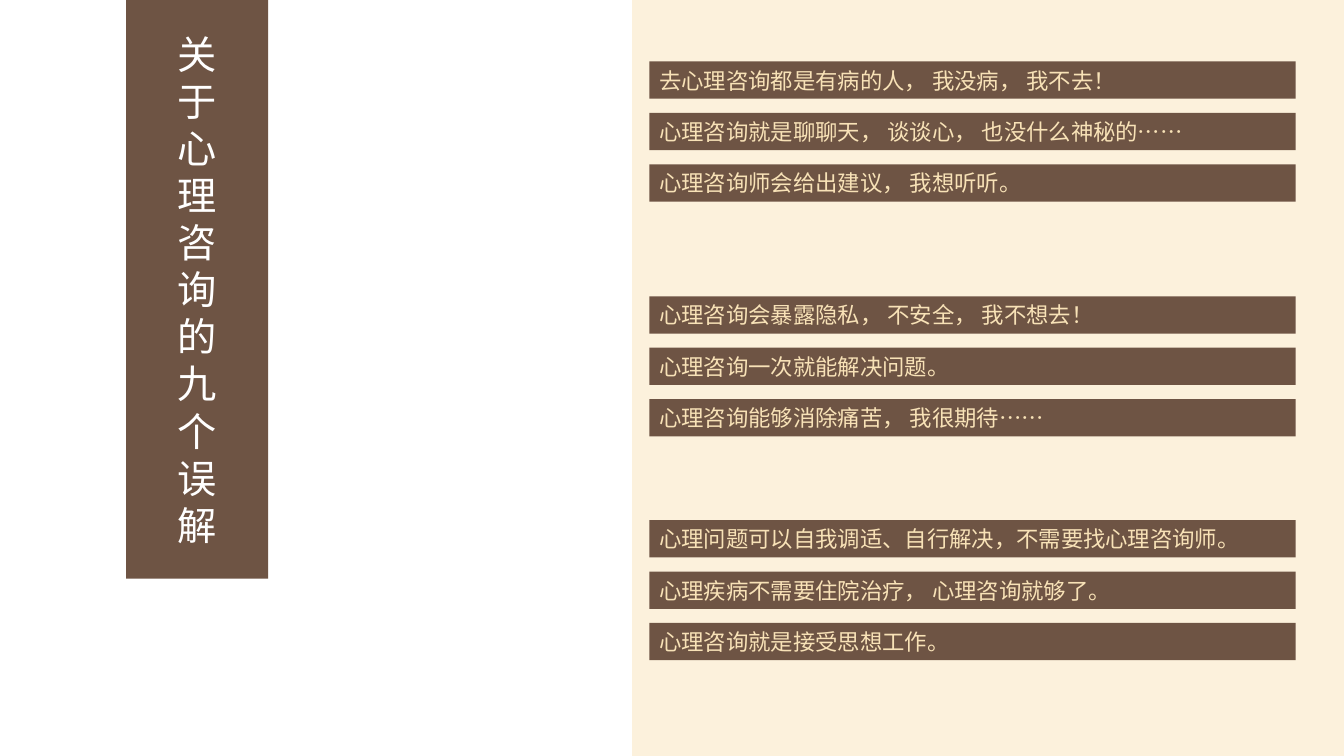
"""Build the slide on nine misconceptions about psychological counselling."""
from dataclasses import dataclass

from lxml.etree import SubElement
from pptx import Presentation
from pptx.dml.color import RGBColor
from pptx.enum.shapes import MSO_SHAPE
from pptx.enum.text import MSO_ANCHOR, MSO_AUTO_SIZE, PP_ALIGN
from pptx.oxml.ns import qn
from pptx.util import Inches, Pt


@dataclass(frozen=True)
class Theme:
    brown: RGBColor = RGBColor(0x6E, 0x54, 0x44)
    cream: RGBColor = RGBColor(0xFC, 0xF0, 0xD9)
    sand: RGBColor = RGBColor(0xF8, 0xE2, 0xB7)
    white: RGBColor = RGBColor(0xFF, 0xFF, 0xFF)
    title_font: str = "Arial"
    body_font: str = "Noto Sans CJK SC"
    title_size: Pt = Pt(28)
    title_leading: Pt = Pt(33.6)
    body_size: Pt = Pt(16)


theme = Theme()


def add_block(left, top, width, height, color):
    block = slide.shapes.add_shape(
        MSO_SHAPE.RECTANGLE, Inches(left), Inches(top), Inches(width), Inches(height))
    block.shadow.inherit = False
    block.fill.solid()
    block.fill.fore_color.rgb = color
    block.line.fill.background()
    return block


def style_text(frame, align, font_name, size, color):
    frame.word_wrap = True
    frame.auto_size = MSO_AUTO_SIZE.NONE
    frame.vertical_anchor = MSO_ANCHOR.MIDDLE
    frame.margin_top = frame.margin_bottom = 0
    for paragraph in frame.paragraphs:
        paragraph.alignment = align
        for run in paragraph.runs:
            run.font.size = size
            run.font.color.rgb = color
            run.font.name = font_name
            SubElement(run.font._element, qn("a:ea"), typeface=font_name)


prs = Presentation()
prs.slide_width = Inches(13.33)
prs.slide_height = Inches(7.5)
slide = prs.slides.add_slide(prs.slide_layouts[5])

panel = add_block(6.27, 0, 7.06, 7.5, theme.cream)
panel_color = panel.fill._xPr.find(qn("a:solidFill"))[0]
SubElement(panel_color, qn("a:alpha"), val="90000")

misconception_groups = [
    (0.61, ["去心理咨询都是有病的人， 我没病， 我不去！",
            "心理咨询就是聊聊天， 谈谈心， 也没什么神秘的……",
            "心理咨询师会给出建议， 我想听听。"]),
    (2.94, ["心理咨询会暴露隐私， 不安全， 我不想去！",
            "心理咨询一次就能解决问题。",
            "心理咨询能够消除痛苦， 我很期待……"]),
    (5.16, ["心理问题可以自我调适、自行解决，不需要找心理咨询师。",
            "心理疾病不需要住院治疗， 心理咨询就够了。",
            "心理咨询就是接受思想工作。"]),
]
bar_pitch = 0.51
for group_top, misconceptions in misconception_groups:
    for row, misconception in enumerate(misconceptions):
        bar = add_block(6.44, group_top + row * bar_pitch, 6.41, 0.37, theme.brown)
        bar.text_frame.text = misconception
        style_text(bar.text_frame, PP_ALIGN.LEFT, theme.body_font,
                   theme.body_size, theme.sand)

title = slide.shapes.title
title.left, title.top = Inches(1.25), Inches(0)
title.width, title.height = Inches(1.41), Inches(5.74)
title.fill.solid()
title.fill.fore_color.rgb = theme.brown
title.text_frame.text = "\n".join("关于心理咨询的九个误解")
style_text(title.text_frame, PP_ALIGN.CENTER, theme.title_font,
           theme.title_size, theme.white)
for character in title.text_frame.paragraphs:
    character.line_spacing = theme.title_leading

prs.save("out.pptx")
